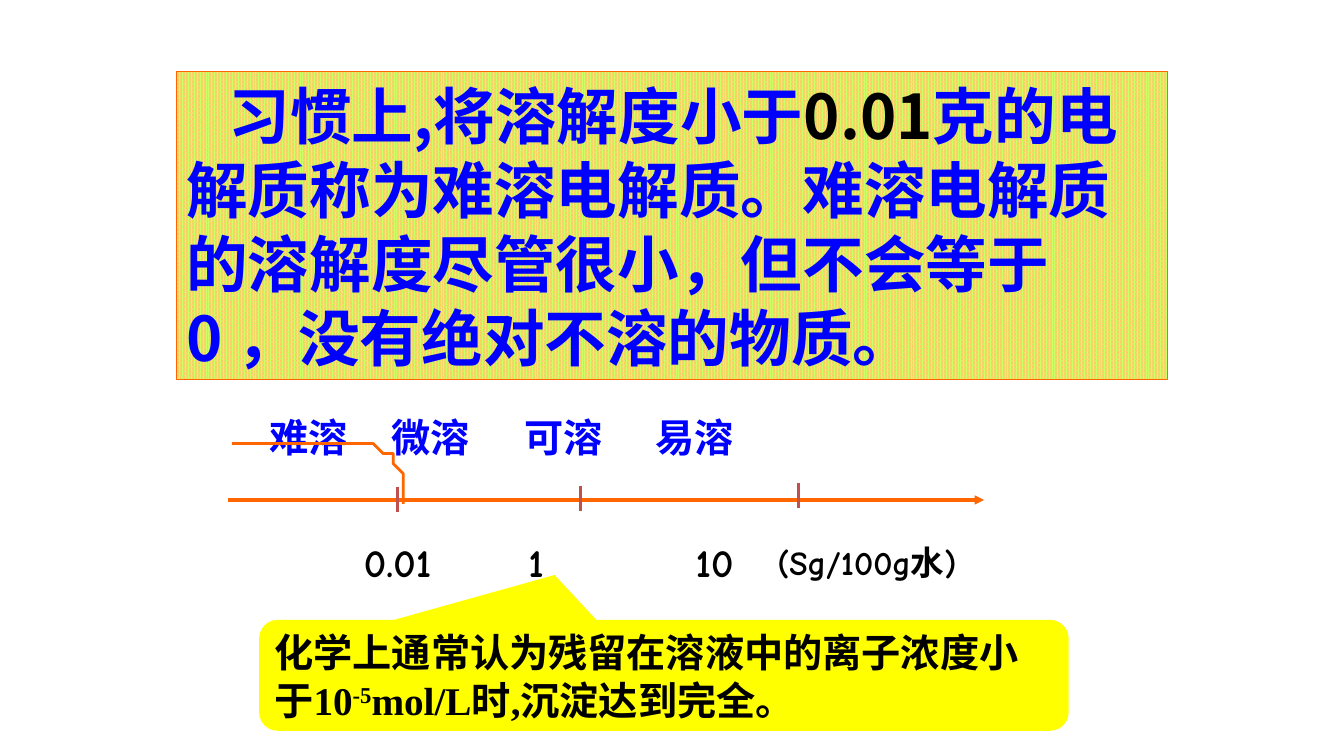
import pptx
import pptx.util
import pptx.dml.color
import pptx.enum.dml
import pptx.enum.shapes
import pptx.enum.text
import pptx.oxml.ns
import lxml.etree

CELL = pptx.util.Inches(0.1)
CJK = "Noto Sans CJK SC"
COMIC = "Comic Neue"
ROMAN = "Times New Roman"
BLUE, BLACK, ORANGE, RED = "0000FF", "000000", "FF6600", "C0504D"


def colour(code):
    return pptx.dml.color.RGBColor.from_string(code)


def write(box, spans, spacing=None):
    frame = box.text_frame
    frame.word_wrap = True
    frame.vertical_anchor = pptx.enum.text.MSO_ANCHOR.MIDDLE
    para = frame.paragraphs[0]
    para.alignment = pptx.enum.text.PP_ALIGN.LEFT
    if spacing:
        para.line_spacing = pptx.util.Pt(spacing)
    for text, size, font, code in spans:
        span = para.add_run()
        span.text = text
        span.font.size = pptx.util.Pt(size)
        span.font.name = font
        span.font.bold = True
        span.font.color.rgb = colour(code)
    return para


deck = pptx.Presentation()
deck.slide_width = int(133.3 * CELL)
deck.slide_height = 75 * CELL
page = deck.slides.add_slide(deck.slide_layouts[6])
shapes = page.shapes

definition = shapes.add_shape(
    pptx.enum.shapes.MSO_SHAPE.RECTANGLE,
    *[int(n * CELL) for n in (17.5, 7.1, 98.3, 30.6)])
definition.shadow.inherit = False
definition.fill.patterned()
definition.fill.pattern = pptx.enum.dml.MSO_PATTERN.PERCENT_80
definition.fill.fore_color.rgb = colour("CCFF66")
definition.fill.back_color.rgb = colour("FFCC66")
definition.line.color.rgb = colour(ORANGE)
definition.line.width = pptx.util.Pt(0.75)
para = write(definition, [
    ("习惯上,将溶解度小于", 44, CJK, BLUE),
    ("0.01", 44, CJK, BLACK),
    ("克的电解质称为难溶电解质。难溶电解质的溶解度尽管很小，但不会等于0 ，没有绝对不溶的物质。", 44, CJK, BLUE),
], 53)
para._p.get_or_add_pPr().set("indent", str(int(4.2 * CELL)))

labels = [(left, 40.5, text, 28, CJK, BLUE) for left, text in
          ((26.7, "难溶"), (38.8, "微溶"), (52, "可溶"), (65, "易溶"))]
labels += [(left, 52.9, text, size, COMIC, BLACK) for left, text, size in
           ((36.1, "0.01", 28), (52.4, "1", 28), (69, "10", 28), (77.1, "(Sg/100g水)", 24))]
for left, top, text, size, font, code in labels:
    box = shapes.add_textbox(*[int(n * CELL) for n in (left, top, 24, 5.7)])
    box.text_frame.margin_left = 0
    write(box, [(text, size, font, code)])

strokes = [(22.6, 49.6, 97.6, 49.6, ORANGE)]
strokes += [(x, y, x, y + 2.5, RED) for x, y in ((39.4, 48.3), (57.6, 48.2), (79.2, 47.9))]
for *ends, code in strokes:
    stroke = shapes.add_connector(
        pptx.enum.shapes.MSO_CONNECTOR.STRAIGHT, *[int(n * CELL) for n in ends])
    stroke.line.color.rgb = colour(code)
    stroke.line.width = pptx.util.Pt(2.25)
    if code == ORANGE:
        lxml.etree.SubElement(stroke.line._get_or_add_ln(),
                              pptx.oxml.ns.qn("a:tailEnd"), type="triangle")
    lxml.etree.SubElement(stroke._element.spPr, pptx.oxml.ns.qn("a:effectLst"))

start = (40.4, 50.4)
bends = [
    ((40.3, 48.1), (40.3, 47.2), (38.7, 45.6)),
    ((38.4, 45.3), (38.2, 45), (37.8, 44.8)),
    ((37.1, 43.8), (33.6, 44.2), (33.2, 44.2)),
    ((29.7, 44.1), (26.1, 44.2), (22.6, 44.2)),
]
points = [start]
for bend in bends:
    knots = (points[-1], *bend)
    for step in range(1, 13):
        t = step / 12
        weights = ((1 - t) ** 3, 3 * t * (1 - t) ** 2, 3 * t * t * (1 - t), t ** 3)
        points.append(tuple(sum(w * knot[axis] for w, knot in zip(weights, knots))
                            for axis in (0, 1)))
builder = shapes.build_freeform(*start, scale=CELL)
builder.add_line_segments(points[1:], close=False)
curve = builder.convert_to_shape()
curve.shadow.inherit = False
curve.fill.background()
curve.line.color.rgb = colour(ORANGE)
curve.line.width = pptx.util.Pt(2)

callout = shapes.add_shape(
    pptx.enum.shapes.MSO_SHAPE.ROUNDED_RECTANGULAR_CALLOUT,
    *[int(n * CELL) for n in (25.7, 61.5, 80.3, 11)])
for index, value in enumerate((-0.135, -0.905, 0.167)):
    callout.adjustments[index] = value
callout.shadow.inherit = False
callout.fill.solid()
callout.fill.fore_color.rgb = colour("FFFF00")
callout.line.fill.background()
para = write(callout, [
    ("化学上通常认为残留在溶液中的离子浓度小于10", 28, ROMAN, BLACK),
    ("-5", 28, ROMAN, BLACK),
    ("mol/L时,沉淀达到完全。", 28, ROMAN, BLACK),
], 34)
para.runs[1].font._element.set("baseline", "30000")

deck.save("out.pptx")
